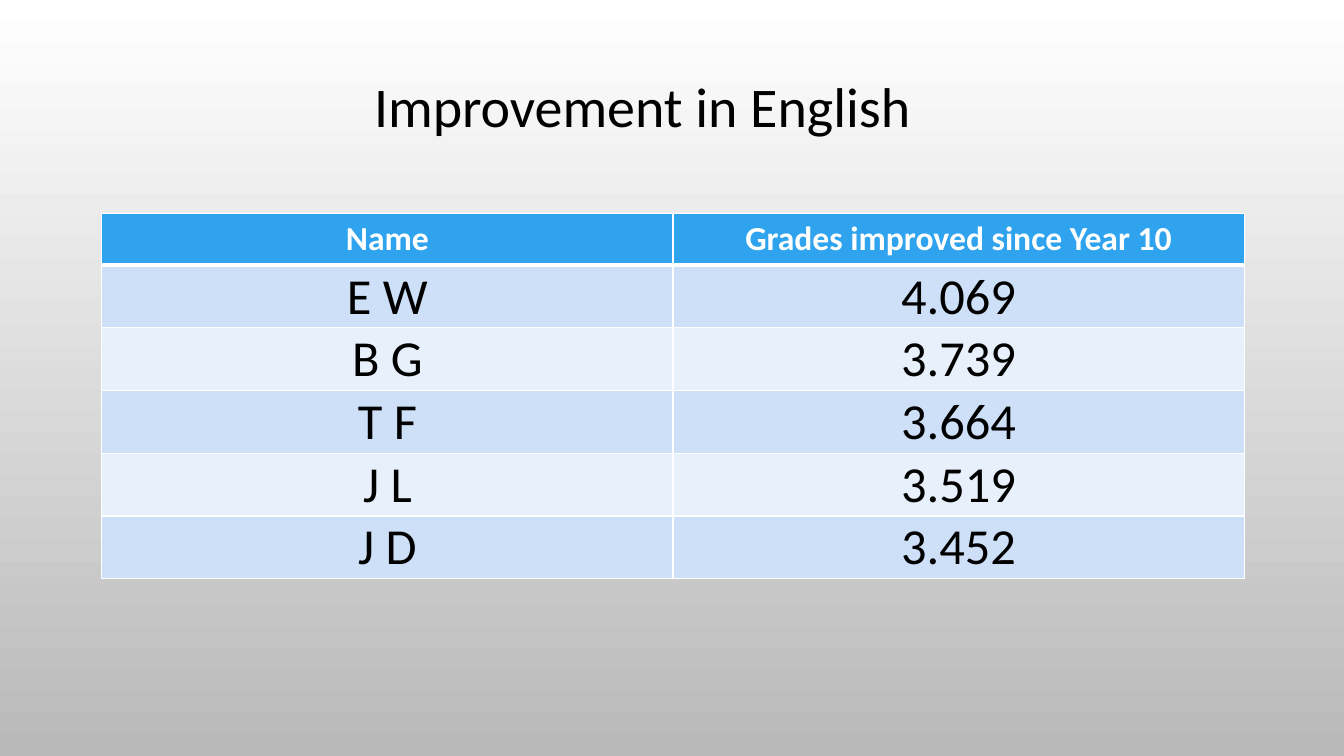
from lxml import etree
from pptx import Presentation
from pptx.dml.color import RGBColor
from pptx.enum.text import MSO_ANCHOR, PP_ALIGN
from pptx.oxml.ns import qn
from pptx.util import Inches, Pt

CENTER = PP_ALIGN.CENTER
TOP, BOTTOM = MSO_ANCHOR.TOP, MSO_ANCHOR.BOTTOM

WHITE = RGBColor(0xFF, 0xFF, 0xFF)
BLACK = RGBColor(0, 0, 0)
GREY = RGBColor(0xB9, 0xB9, 0xB9)
BLUE = RGBColor(0x2F, 0xA3, 0xEE)
BANDS = (RGBColor(0xCD, 0xE0, 0xF8), RGBColor(0xE8, 0xF0, 0xFC))
FONT = "Calibri"

GRADES = [
    ("Name", "Grades improved since Year 10"),
    ("E W", "4.069"),
    ("B G", "3.739"),
    ("T F", "3.664"),
    ("J L", "3.519"),
    ("J D", "3.452"),
]
HEAD_H, ROW_H = 0.51, 0.62


def style(frame, size, color, bold=False):
    par = frame.paragraphs[0]
    par.alignment = CENTER
    font = par.runs[0].font
    font.name, font.size, font.bold = FONT, Pt(size), bold
    font.color.rgb = color


def add_rules(cell, top, bottom):
    """Draw white cell borders; top and bottom are widths in points."""
    props = cell._tc.get_or_add_tcPr()
    for side, width in (("L", 1), ("R", 1), ("T", top), ("B", bottom)):
        line = etree.SubElement(props, qn(f"a:ln{side}"), w=str(Pt(width)))
        fill = etree.SubElement(line, qn("a:solidFill"))
        etree.SubElement(fill, qn("a:srgbClr"), val=str(WHITE))


def add_back(slide):
    fill = slide.background.fill
    fill.gradient()
    fill.gradient_angle = 270
    for stop, color in zip(fill.gradient_stops, (WHITE, GREY)):
        stop.color.rgb = color


def add_title(slide, left, top, width, height):
    box = slide.shapes.add_textbox(*map(Inches, (left, top, width, height)))
    frame = box.text_frame
    frame.word_wrap = True
    frame.text = "Improvement in English"
    style(frame, 40, BLACK)


def add_grades(slide, left, top, width):
    height = HEAD_H + ROW_H * (len(GRADES) - 1)
    table = slide.shapes.add_table(
        len(GRADES), len(GRADES[0]),
        *map(Inches, (left, top, width, height))).table
    for i, values in enumerate(GRADES):
        head = i == 0
        table.rows[i].height = Inches(HEAD_H if head else ROW_H)
        for j, value in enumerate(values):
            cell = table.cell(i, j)
            cell.text = value
            add_rules(cell, 3 if i == 1 else 1, 3 if head else 1)
            cell.fill.solid()
            cell.fill.fore_color.rgb = BLUE if head else BANDS[(i - 1) % 2]
            cell.vertical_anchor = TOP if head else BOTTOM
            if not head:
                cell.margin_left = cell.margin_right = Inches(0.01)
                cell.margin_top, cell.margin_bottom = Inches(0.01), 0
            style(cell.text_frame, 24 if head else 36,
                  WHITE if head else BLACK, head)


def main():
    deck = Presentation()
    deck.slide_width, deck.slide_height = Inches(13.33), Inches(7.5)
    slide = deck.slides.add_slide(deck.slide_layouts[6])
    add_back(slide)
    add_grades(slide, 1.01, 2.12, 11.33)
    add_title(slide, 2.04, 0.66, 8.66, 0.77)
    deck.save("out.pptx")


if __name__ == "__main__":
    main()
